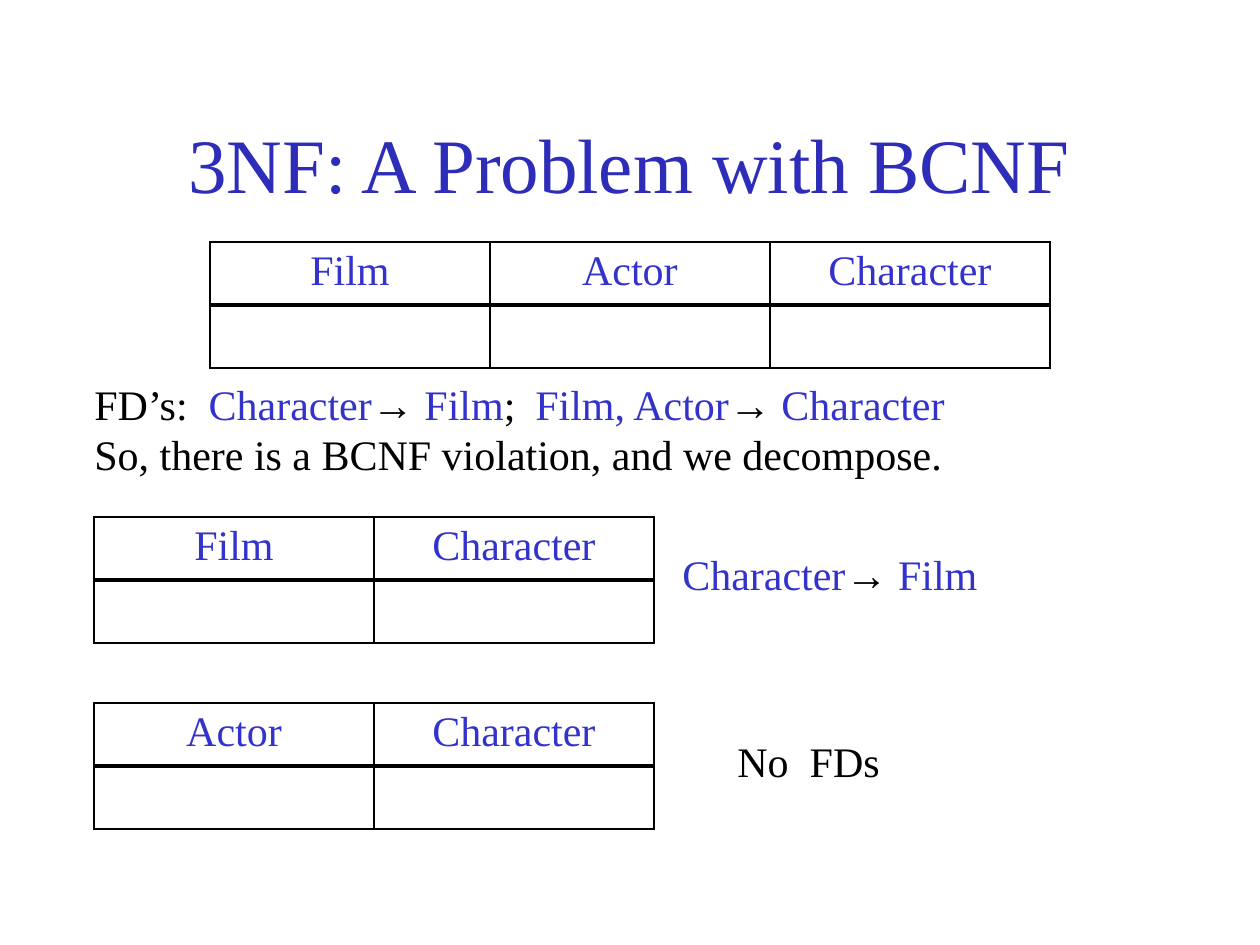
from lxml.etree import SubElement
from pptx import Presentation
from pptx.dml.color import RGBColor
from pptx.enum.text import MSO_ANCHOR as Anchor, MSO_AUTO_SIZE as Fit, PP_ALIGN as Align
from pptx.oxml.ns import qn
from pptx.util import Emu, Pt

FACE = "Times New Roman"
BLACK, BLUE, NAVY, WHITE = "000000", "3333CC", "2D2DB9", "FFFFFF"
COL, ROW = 280, 63
THIN, THICK = 1, 3


def px(n):
    return Emu(round(n * 914400 / 126))


def rgb(code):
    return RGBColor.from_string(code)


def style(font, size, color=None):
    font.name, font.size = FACE, Pt(size)
    if color:
        font.color.rgb = rgb(color)


def place(shape, x, y, w, h):
    shape.left, shape.top, shape.width, shape.height = map(px, (x, y, w, h))


def add_title(slide, text):
    title = slide.shapes.title
    place(title, 94, 84, 1071, 158)
    frame = title.text_frame
    frame.text = text
    frame.vertical_anchor = Anchor.MIDDLE
    para = frame.paragraphs[0]
    para.alignment = Align.CENTER
    style(para.font, 44, NAVY)


def add_text(slide, x, y, w, h, lines):
    """Each line is a list of (text, color) runs."""
    frame = slide.shapes.add_textbox(*map(px, (x, y, w, h))).text_frame
    frame.word_wrap = False
    frame.auto_size = Fit.SHAPE_TO_FIT_TEXT
    for i, line in enumerate(lines):
        para = frame.add_paragraph() if i else frame.paragraphs[0]
        style(para.font, 24)
        for text, color in line:
            run = para.add_run()
            run.text = text
            style(run.font, 24, color)


def add_edge(cell, side, width):
    props = cell._tc.get_or_add_tcPr()
    line = SubElement(props, qn(f"a:ln{side}"), w=str(Pt(width)))
    fill = SubElement(line, qn("a:solidFill"))
    SubElement(fill, qn("a:srgbClr"), val=BLACK)


def add_schema(slide, x, y, names):
    """A header row of attribute names above one empty row."""
    size = COL * len(names), ROW * 2
    table = slide.shapes.add_table(2, len(names), *map(px, (x, y, *size))).table
    table.first_row = table.horz_banding = False
    for c, name in enumerate(names):
        table.columns[c].width = px(COL)
        for r, text in enumerate((name, "")):
            cell = table.cell(r, c)
            cell.text = text
            para = cell.text_frame.paragraphs[0]
            para.alignment = Align.CENTER
            style(para.font, 24, BLUE)
            # The rule between header and body is thick
            top, base = (THICK, THIN) if r else (THIN, THICK)
            for side, width in zip("LRTB", (THIN, THIN, top, base)):
                add_edge(cell, side, width)
            cell.fill.solid()
            cell.fill.fore_color.rgb = rgb(WHITE)


def main():
    deck = Presentation()
    deck.slide_width, deck.slide_height = px(1260), px(945)
    slide = deck.slides.add_slide(deck.slide_layouts[5])
    add_title(slide, "3NF: A Problem with BCNF")

    # Full relation and its dependencies
    add_schema(slide, 210, 242, ["Film", "Actor", "Character"])
    rule = [("Character", BLUE), ("→", BLACK), (" Film", BLUE)]
    add_text(slide, 82, 372, 946, 115, [
        [("FD’s:  ", BLACK), *rule, (";\t", BLACK),
         ("Film, Actor", BLUE), ("→ ", BLACK), ("Character", BLUE)],
        [("So, there is a BCNF violation, and we decompose.", BLACK)],
    ])

    # Decomposed relations
    add_schema(slide, 94, 517, ["Film", "Character"])
    add_text(slide, 670, 542, 323, 63, [rule])
    add_schema(slide, 94, 703, ["Actor", "Character"])
    add_text(slide, 725, 729, 168, 63, [[("No  FDs", BLACK)]])

    deck.save("out.pptx")


if __name__ == "__main__":
    main()
